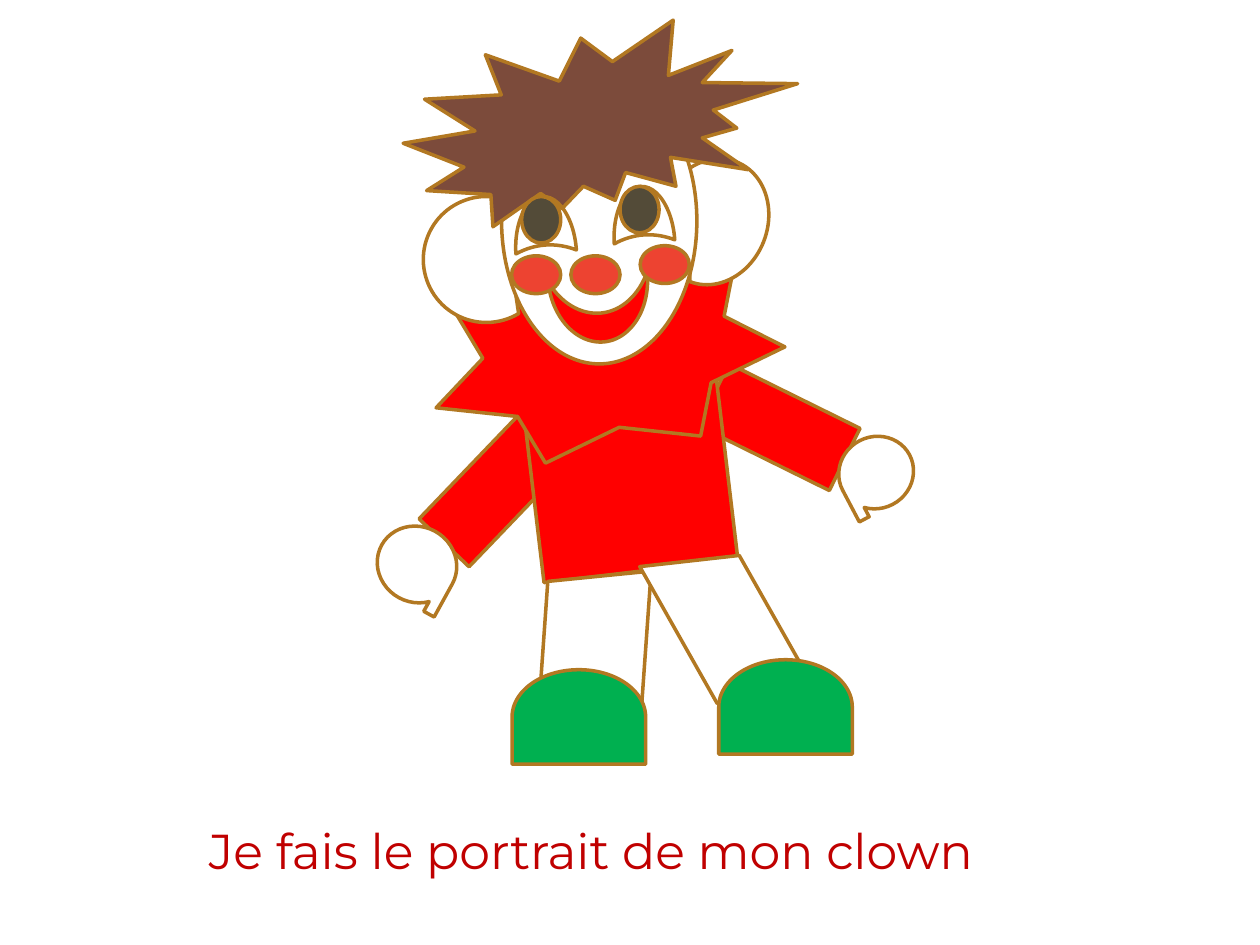
import pptx
import pptx.dml.color
import pptx.enum.shapes
import pptx.enum.text
import pptx.util

Pt = pptx.util.Pt
Kind = pptx.enum.shapes.MSO_SHAPE

COLOURS = {
    "outline": "B27822",
    "red": "FF0000",
    "white": "FFFFFF",
    "hair": "7C4B3B",
    "pupil": "534B38",
    "nose": "ED4331",
    "shoe": "00B050",
    "caption": "C00000",
}


def colour(name):
    return pptx.dml.color.RGBColor.from_string(COLOURS[name])


def write_text(box, text, font="Montserrat", size=28, fill="caption"):
    para = box.text_frame.paragraphs[0]
    span = para.add_run()
    span.text = text
    span.font.name = font
    span.font.size = Pt(size)
    span.font.color.rgb = colour(fill)


class Painter:
    """Holds the outline style and the slide being drawn."""

    def __init__(self, page, outline="outline", weight=2):
        self.page = page
        self.outline = outline
        self.weight = weight

    def shape(self, kind, left, top, width, height, fill=None, turn=0, flip="", adjust=None):
        """Add an outlined preset; flip takes any of the letters H and V."""
        shape = self.page.shapes.add_shape(kind, Pt(left), Pt(top), Pt(width), Pt(height))
        shape.shadow.inherit = False
        shape.rotation = turn
        shape.line.color.rgb = colour(self.outline)
        shape.line.width = Pt(self.weight)
        if fill:
            shape.fill.solid()
            shape.fill.fore_color.rgb = colour(fill)
        else:
            shape.fill.background()
        if adjust is not None:
            shape.adjustments[0] = adjust
        for axis in flip:
            shape._element.spPr.xfrm.set("flip" + axis, "1")
        return shape

    def text(self, text, left, top, width, height):
        box = self.page.shapes.add_textbox(Pt(left), Pt(top), Pt(width), Pt(height))
        box.text_frame.word_wrap = True
        box.text_frame.vertical_anchor = pptx.enum.text.MSO_ANCHOR.TOP
        write_text(box, text)
        return box


def draw_body(painter):
    for left, top, turn in ((425.5, 202.3, 296.3), (262.8, 238.3, 43.8)):
        painter.shape(Kind.RECTANGLE, left, top, 39.6, 83.5, "red", turn)
    painter.shape(Kind.RECTANGLE, 303.8, 213.8, 111.6, 113, "red", 353.2)
    painter.shape(Kind.STAR_7_POINT, 244.8, 140.4, 202.3, 117.4, "red", 350.1)


def draw_head(painter):
    painter.shape(Kind.CHORD, 376.6, 90, 61.9, 73.4, "white", 201.3)
    painter.shape(Kind.CHORD, 241.9, 112.3, 72, 72, "white", 14.1)
    painter.shape(Kind.OVAL, 286.6, 44.6, 111.6, 163.4, "white")
    painter.shape(Kind.EXPLOSION2, 230.4, 11.5, 225.4, 118.1, "hair")
    painter.shape(Kind.MOON, 324.7, 148.3, 37.4, 56.9, "red", 264.2, adjust=0.443)
    for left, top in ((295.2, 110.9), (351.4, 105.1)):
        painter.shape(Kind.MOON, left, top, 31.7, 34.6, turn=86.2, adjust=0.875)
        painter.shape(Kind.OVAL, left + 2.9, top + 1.4, 22.3, 26.6, "pupil")
    for left, top in ((326.2, 146.2), (292.3, 146.2), (365.8, 140.4)):
        painter.shape(Kind.OVAL, left, top, 28.1, 21.6, "nose")


def draw_limbs(painter):
    painter.shape(Kind.FLOWCHART_DATA, 302.4, 329.8, 74.2, 86.4, "white", 354.3)
    painter.shape(Kind.FLOWCHART_DATA, 360, 333.4, 112.3, 52.6, "white", 60.5)
    for left, top in ((303.8, 371.5), (421.9, 365.8)):
        painter.shape(Kind.FLOWCHART_DELAY, left, top, 54, 76.3, "shoe", 270)
    hand = Kind.FLOWCHART_SEQUENTIAL_ACCESS_STORAGE
    painter.shape(hand, 216.7, 299.5, 43.2, 46.1, "white", 118.8, flip="V")
    painter.shape(hand, 480.2, 248.4, 41, 43.2, "white", 242.3, flip="HV")


def main():
    deck = pptx.Presentation()
    deck.slide_width, deck.slide_height = Pt(720), Pt(540)
    painter = Painter(deck.slides.add_slide(deck.slide_layouts[6]))
    draw_body(painter)
    draw_head(painter)
    draw_limbs(painter)
    painter.text("Je fais le portrait de mon clown", 112.3, 465.1, 505.4, 74.9)
    deck.save("out.pptx")


if __name__ == "__main__":
    main()
